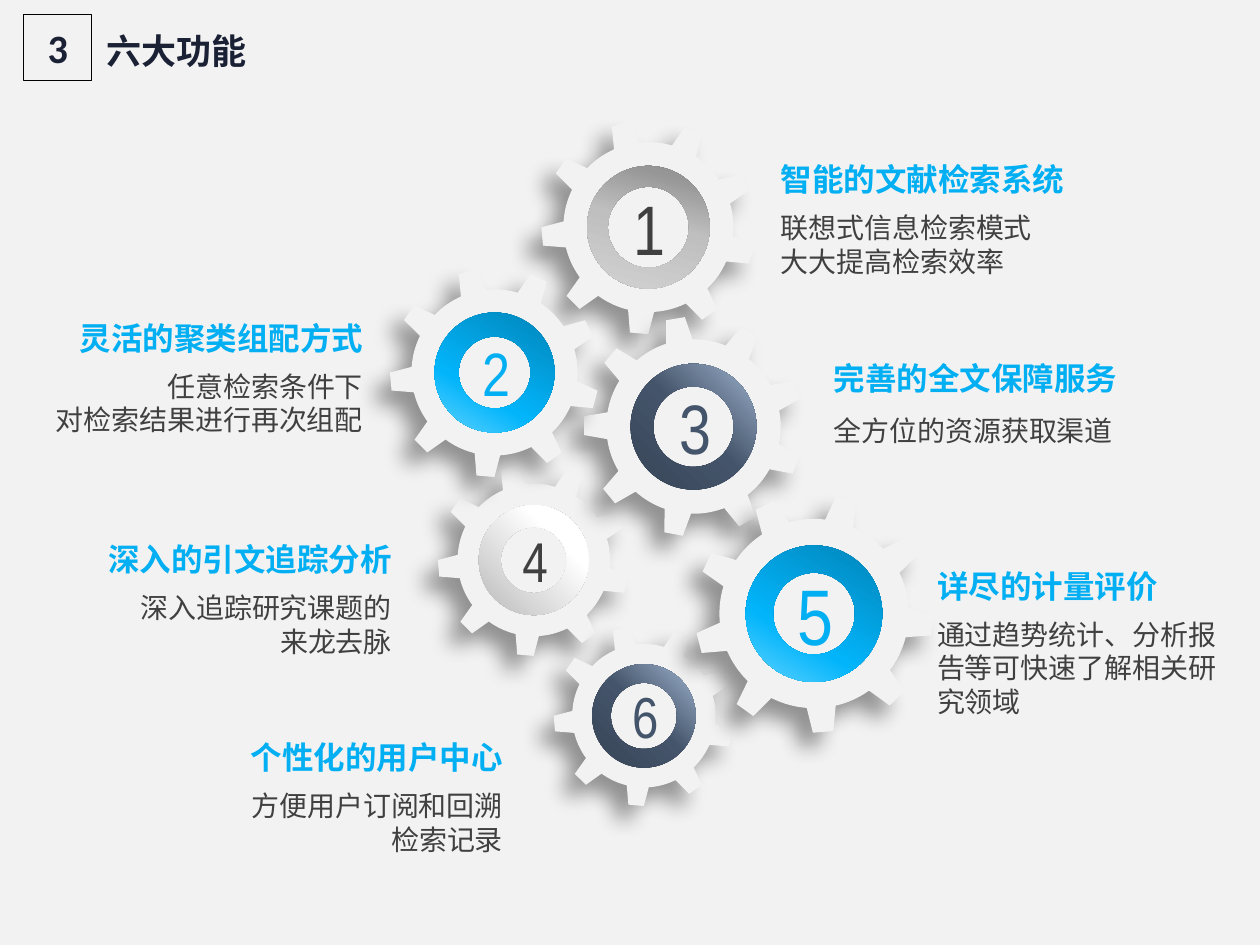
"""Build the slide of six functions shown as numbered gears."""
from lxml.etree import SubElement as Sub
from pptx import Presentation
from pptx.dml.color import RGBColor as RGB
from pptx.enum.shapes import MSO_SHAPE as Form
from pptx.enum.text import MSO_ANCHOR as Anchor, MSO_AUTO_SIZE as Auto, PP_ALIGN as Align
from pptx.oxml.ns import qn
from pptx.util import Cm, Pt

PALE = RGB(0xF2, 0xF2, 0xF2)
GREY = RGB(0x40, 0x40, 0x40)
BLUE = RGB(0x02, 0xAF, 0xF3)
SLATE = RGB(0x44, 0x54, 0x6A)
NAVY = RGB(0x1B, 0x21, 0x35)
BLACK = RGB(0, 0, 0)
HAN, SLIM, PLAIN = "Noto Sans CJK SC", "Arial Narrow", "Calibri"

WHITE_RING = [(0, "FFFFFF"), (35, "FFFFFF"), (100, "A6A6A6")]
GREY_RING = [(0, "6F6F6F"), (23, "969696"), (48, "BFBFBF"), (100, "D9D9D9")]
SLATE_RING = [(0, "D6DCE5"), (24, "8497B0"), (49, "44546A"), (100, "333F50")]
BLUE_RING = [(0, "0175A3"), (61, "02B5FB"), (85, "61D2FE")]

# number, centre x, centre y, width, gear turn, ring turn, ring depth, stops, round, size, colour
GEARS = [
    ("4", 10.76, 11.29, 3.89, 65, 230, 0.2, WHITE_RING, True, 32, GREY),
    ("1", 13.07, 4.58, 4.34, 65, 215, 0.17, GREY_RING, False, 40, GREY),
    ("3", 13.98, 8.6, 4.45, 70.5, 215.3, 0.18, SLATE_RING, True, 40, SLATE),
    ("2", 9.97, 7.51, 4.24, 65, 230, 0.2, BLUE_RING, False, 35, BLUE),
    ("6", 12.98, 14.43, 3.66, 65, 209.8, 0.18, SLATE_RING, True, 33, SLATE),
    ("5", 16.41, 12.37, 4.83, 55.6, 220.6, 0.2, BLUE_RING, False, 45, BLUE),
]
# heading, lines, align, outer edge, top, body width, rows, line spacing
NOTES = [
    ("智能的文献检索系统", ["联想式信息检索模式", "大大提高检索效率"], Align.LEFT, 15.49, 3.1, 5.84, 2, 1),
    ("灵活的聚类组配方式", ["任意检索条件下", "对检索结果进行再次组配"], Align.RIGHT, 7.57, 6.3, 7.21, 2, 1),
    ("完善的全文保障服务", ["全方位的资源获取渠道"], Align.LEFT, 16.56, 7.11, 6.27, 1, 1.5),
    ("深入的引文追踪分析", ["深入追踪研究课题的", "来龙去脉"], Align.RIGHT, 8.15, 10.77, 7.39, 2, 1),
    ("详尽的计量评价", ["通过趋势统计、分析报告等可快速了解相关研究领域"], Align.LEFT, 18.64, 11.3, 6.35, 3, 1),
    ("个性化的用户中心", ["方便用户订阅和回溯检索记录"], Align.RIGHT, 10.39, 14.76, 5.92, 2, 1),
]


def write(shape, lines, font, size, color, align, bold=False, wrap=True, mid=False, gap=1):
    frame = shape.text_frame
    frame.auto_size = Auto.NONE
    frame.word_wrap = wrap
    frame.vertical_anchor = Anchor.MIDDLE if mid else Anchor.TOP
    for i, line in enumerate(lines):
        para = frame.add_paragraph() if i else frame.paragraphs[0]
        para.alignment = align
        para.line_spacing = gap
        run = para.add_run()
        run.text = line
        run.font.name, run.font.size, run.font.bold = font, Pt(size), bold
        run.font.color.rgb = color
        Sub(run.font._element, qn("a:ea"), typeface=font)


def box(slide, x, y, wide, high):
    return slide.shapes.add_textbox(Cm(x), Cm(y), Cm(wide), Cm(high))


def wheel(slide, form, x, y, wide, turn, cuts):
    half = wide / 2
    shape = slide.shapes.add_shape(form, Cm(x - half), Cm(y - half), Cm(wide), Cm(wide))
    shape.rotation = turn
    for i, cut in enumerate(cuts):
        shape.adjustments[i] = cut
    shape.fill.solid()
    shape.fill.fore_color.rgb = PALE
    shape.line.fill.background()
    shape.shadow.inherit = False
    return shape


def cast(shape):
    glow = Sub(shape._element.spPr.find(qn("a:effectLst")), qn("a:outerShdw"), blurRad=str(Pt(12)),
               dist=str(Pt(11)), dir=str(135 * 60000), algn="tr", rotWithShape="0")
    Sub(Sub(glow, qn("a:srgbClr"), val="000000"), qn("a:alpha"), val="40000")


def shade(shape, stops, is_round, angle):
    old = shape._element.spPr.find(qn("a:solidFill"))
    grad = Sub(shape._element.spPr, qn("a:gradFill"), rotWithShape="1")
    old.getparent().replace(old, grad)
    group = Sub(grad, qn("a:gsLst"))
    for pos, color in stops:
        Sub(Sub(group, qn("a:gs"), pos=str(pos * 1000)), qn("a:srgbClr"), val=color)
    if is_round:
        Sub(Sub(grad, qn("a:path"), path="circle"), qn("a:fillToRect"), l="100000", b="100000")
    else:
        Sub(grad, qn("a:lin"), ang=str(round(angle * 60000)), scaled="0")


def main():
    deck = Presentation()
    deck.slide_width, deck.slide_height = Cm(25.4), Cm(19.05)
    slide = deck.slides.add_slide(deck.slide_layouts[5])
    slide.background.fill.solid()
    slide.background.fill.fore_color.rgb = PALE

    title = slide.shapes.title
    title.left, title.top, title.width, title.height = Cm(1.9), Cm(0.38), Cm(5.49), Cm(1.19)
    write(title, ["六大功能"], HAN, 20, NAVY, Align.LEFT, bold=True, mid=True, gap=1.1)
    badge = slide.shapes.add_shape(Form.RECTANGLE, Cm(0.48), Cm(0.3), Cm(1.37), Cm(1.32))
    badge.fill.background()
    badge.line.color.rgb, badge.line.width = BLACK, Pt(0.75)
    badge.shadow.inherit = False
    write(badge, ["3"], PLAIN, 23, NAVY, Align.CENTER, bold=True, mid=True)

    for _, x, y, wide, turn, spin, depth, stops, is_round, _, _ in GEARS:
        cast(wheel(slide, Form.GEAR_9, x, y, wide, turn, [0.105, 0.018]))
        ring = wheel(slide, Form.DONUT, x, y, wide * 0.57, spin, [depth])
        shade(ring, stops, is_round, 315 - turn)

    for num, x, y, *_, size, color in GEARS:
        high = 0.25 + size * 0.04
        label = box(slide, x - 0.57, y - high / 2, 1.2, high)
        write(label, [num], SLIM, size, color, Align.CENTER, wrap=False, mid=True)

    for head, lines, align, edge, top, wide, rows, gap in NOTES:
        span = 0.56 + 0.64 * len(head)
        shift = 1 if align == Align.RIGHT else 0
        write(box(slide, edge - shift * span, top, span, 1.02), [head], HAN, 18, BLUE, align,
              bold=True, wrap=False)
        drop = 1.02 - 0.52 * (gap - 1)
        body = box(slide, edge - shift * wide, top + drop, wide, 0.27 + 0.68 * rows * gap)
        write(body, lines, HAN, 16, GREY, align, gap=gap)

    deck.save("out.pptx")


if __name__ == "__main__":
    main()
